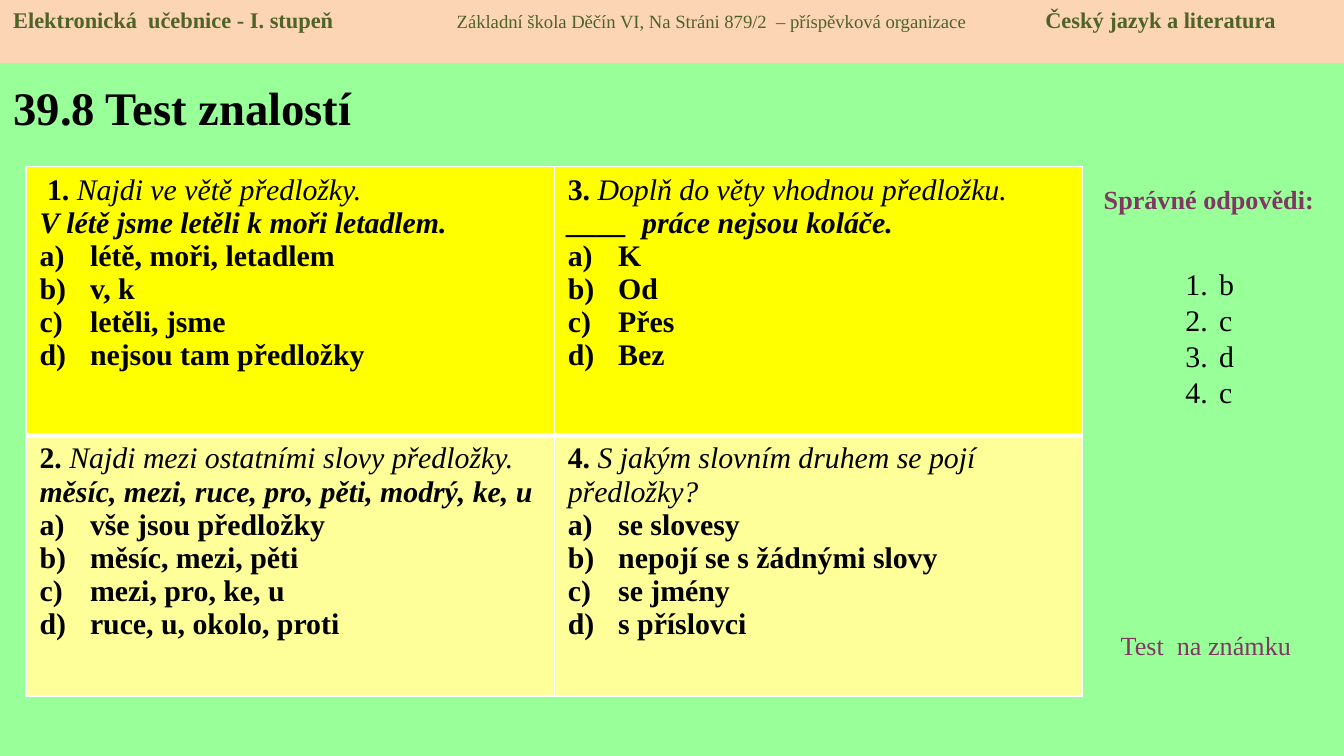
from dataclasses import dataclass

from lxml import etree
from pptx import Presentation
from pptx.dml.color import RGBColor
from pptx.enum.shapes import MSO_SHAPE
from pptx.enum.text import MSO_ANCHOR, MSO_AUTO_SIZE, PP_ALIGN
from pptx.oxml.ns import qn
from pptx.util import Inches, Pt

RECT = MSO_SHAPE.RECTANGLE
TOP, MIDDLE = MSO_ANCHOR.TOP, MSO_ANCHOR.MIDDLE
LEFT, CENTER = PP_ALIGN.LEFT, PP_ALIGN.CENTER
FIXED = MSO_AUTO_SIZE.NONE


@dataclass(frozen=True)
class Theme:
    face: str = "Times New Roman"
    back: str = "99FF99"
    band: str = "FCD5B5"
    green: str = "4F6228"
    plum: str = "813763"
    black: str = "000000"
    white: str = "FFFFFF"
    rows: tuple = ("FFFF00", "FFFF99")
    title: int = 25
    body: int = 16
    label: int = 14
    head: int = 12
    small: int = 10


THEME = Theme()

# The slide is a grid of square cells, 100 columns wide
COLS, ROWS = 100, 56.25
INDENT = 3.75
BOLD, ITALIC = {"bold": True}, {"italic": True}
BOTH = BOLD | ITALIC

# Each question: its lead lines as (text, style) parts, then its options
TESTS = [
    [
        ([[(" ", ITALIC), ("1. ", BOLD), ("Najdi ve větě předložky.", ITALIC)],
          [("V létě jsme letěli k moři letadlem.", BOTH)]],
         ["létě, moři, letadlem", "v, k", "letěli, jsme", "nejsou tam předložky"]),
        ([[("3. ", BOLD), ("Doplň do věty vhodnou předložku.", ITALIC)],
          [("____  práce nejsou koláče.", BOTH)]],
         ["K", "Od", "Přes", "Bez"]),
    ],
    [
        ([[("2. ", BOLD), ("Najdi mezi ostatními slovy předložky.", ITALIC)],
          [("měsíc, mezi, ruce, pro, pěti, modrý, ke, u", BOTH)]],
         ["vše jsou předložky", "měsíc, mezi, pěti", "mezi, pro, ke, u",
          "ruce, u, okolo, proti"]),
        ([[("4. ", BOLD), ("S jakým slovním druhem se pojí předložky?", ITALIC)]],
         ["se slovesy", "nepojí se s žádnými slovy", "se jmény", "s příslovci"]),
    ],
]


def grid(num):
    return Inches(num / 10)


def place(shape, *area):
    for name, num in zip(("left", "top", "width", "height"), area):
        setattr(shape, name, grid(num))


def apply(item, values):
    for name, value in values.items():
        setattr(item, name, value)


def paint(fill, color):
    fill.solid()
    fill.fore_color.rgb = RGBColor.from_string(color)


def write(para, text, size, color=THEME.black, **style):
    run = para.add_run()
    run.text = text
    look = {"name": THEME.face, "size": Pt(size), "bold": False, "italic": False}
    apply(run.font, look | style)
    run.font.color.rgb = RGBColor.from_string(color)


def line(frame):
    """Give the first empty paragraph, or else a new one."""
    para = frame.paragraphs[-1]
    return frame.add_paragraph() if para.runs else para


def number(para, kind, indent):
    props = para._p.get_or_add_pPr()
    props.set("marL", str(grid(indent)))
    props.set("indent", str(-grid(indent)))
    etree.SubElement(props, qn("a:buFont"), typeface="+mj-lt")
    etree.SubElement(props, qn("a:buAutoNum"), type=kind)


def tabs(para, *stops):
    group = etree.SubElement(para._p.get_or_add_pPr(), qn("a:tabLst"))
    for stop in stops:
        etree.SubElement(group, qn("a:tab"), pos=str(grid(stop)), algn="l")


def header(slide):
    band = slide.shapes.add_shape(RECT, 0, 0, grid(COLS), grid(4.7))
    band.shadow.inherit = False
    paint(band.fill, THEME.band)
    band.line.fill.background()
    frame = band.text_frame
    apply(frame, {"word_wrap": True, "vertical_anchor": TOP})
    para = frame.paragraphs[0]
    para.alignment = LEFT
    tabs(para, 33, 76.8)
    write(para, "Elektronická  učebnice - I. stupeň\t", THEME.head, THEME.green, bold=True)
    write(para, "Základní škola Děčín VI, Na Stráni 879/2  – příspěvková organizace\t",
          THEME.small, THEME.green)
    write(para, "Český jazyk a literatura", THEME.head, THEME.green, bold=True)


def heading(shape, text):
    place(shape, 0, 4.7, 31.9, 6.5)
    frame = shape.text_frame
    apply(frame, {"auto_size": FIXED, "vertical_anchor": MIDDLE})
    para = frame.paragraphs[0]
    para.alignment = LEFT
    write(para, text, THEME.title, bold=True)


def answers(shape, keys):
    place(shape, 87.2, 16.5, 5.5, 19.9)
    frame = shape.text_frame
    apply(frame, {"auto_size": FIXED, "vertical_anchor": TOP,
                  "margin_top": grid(3.3), "margin_right": 0})
    for key in keys:
        para = line(frame)
        number(para, "arabicPeriod", 2.5)
        apply(para, {"alignment": LEFT, "space_before": Pt(0)})
        write(para, key, THEME.body)


def label(slide, text, area, align=LEFT, **style):
    box = slide.shapes.add_textbox(*map(grid, area))
    box.text_frame.word_wrap = True
    para = box.text_frame.paragraphs[0]
    para.alignment = align
    write(para, text, THEME.label, THEME.plum, **style)


def border(cell, widths):
    props = cell._tc.get_or_add_tcPr()
    for pos, (side, width) in enumerate(widths.items()):
        edge = etree.Element(qn(f"a:ln{side}"), w=str(Pt(width)))
        fill = etree.SubElement(edge, qn("a:solidFill"))
        etree.SubElement(fill, qn("a:srgbClr"), val=THEME.white)
        props.insert(pos, edge)


def question(cell, leads, options):
    for parts in leads:
        para = line(cell.text_frame)
        for text, style in parts:
            write(para, text, THEME.body, **style)
    for text in options:
        para = line(cell.text_frame)
        number(para, "alphaLcParenR", INDENT)
        write(para, text, THEME.body, bold=True)


def quiz(slide):
    frame = slide.shapes.add_table(2, 2, *map(grid, (1.95, 12.4, 78.6, 39.4)))
    table = frame.table
    apply(table, {"first_row": False, "horz_banding": False})
    for row, height in zip(table.rows, (20, 19.4)):
        row.height = grid(height)
    for r, tests in enumerate(TESTS):
        for c, (leads, options) in enumerate(tests):
            cell = table.cell(r, c)
            paint(cell.fill, THEME.rows[r])
            # The edge between the two rows is the thick one
            border(cell, {"L": 1, "R": 1, "T": 3 if r else 1, "B": 1 if r else 3})
            question(cell, leads, options)


def main():
    deck = Presentation()
    apply(deck, {"slide_width": grid(COLS), "slide_height": grid(ROWS)})
    slide = deck.slides.add_slide(deck.slide_layouts[0])
    paint(slide.background.fill, THEME.back)

    # Title and key to the test
    heading(slide.shapes.title, "39.8 Test znalostí")
    answers(slide.placeholders[1], "bcdc")

    # Questions, side labels and top band
    label(slide, "Správné odpovědi:", (80.5, 13.15, 18.9, 3.4), CENTER, bold=True)
    quiz(slide)
    label(slide, "Test  na známku", (82.4, 46.35, 15.7, 3.4))
    header(slide)
    deck.save("out.pptx")


if __name__ == "__main__":
    main()
